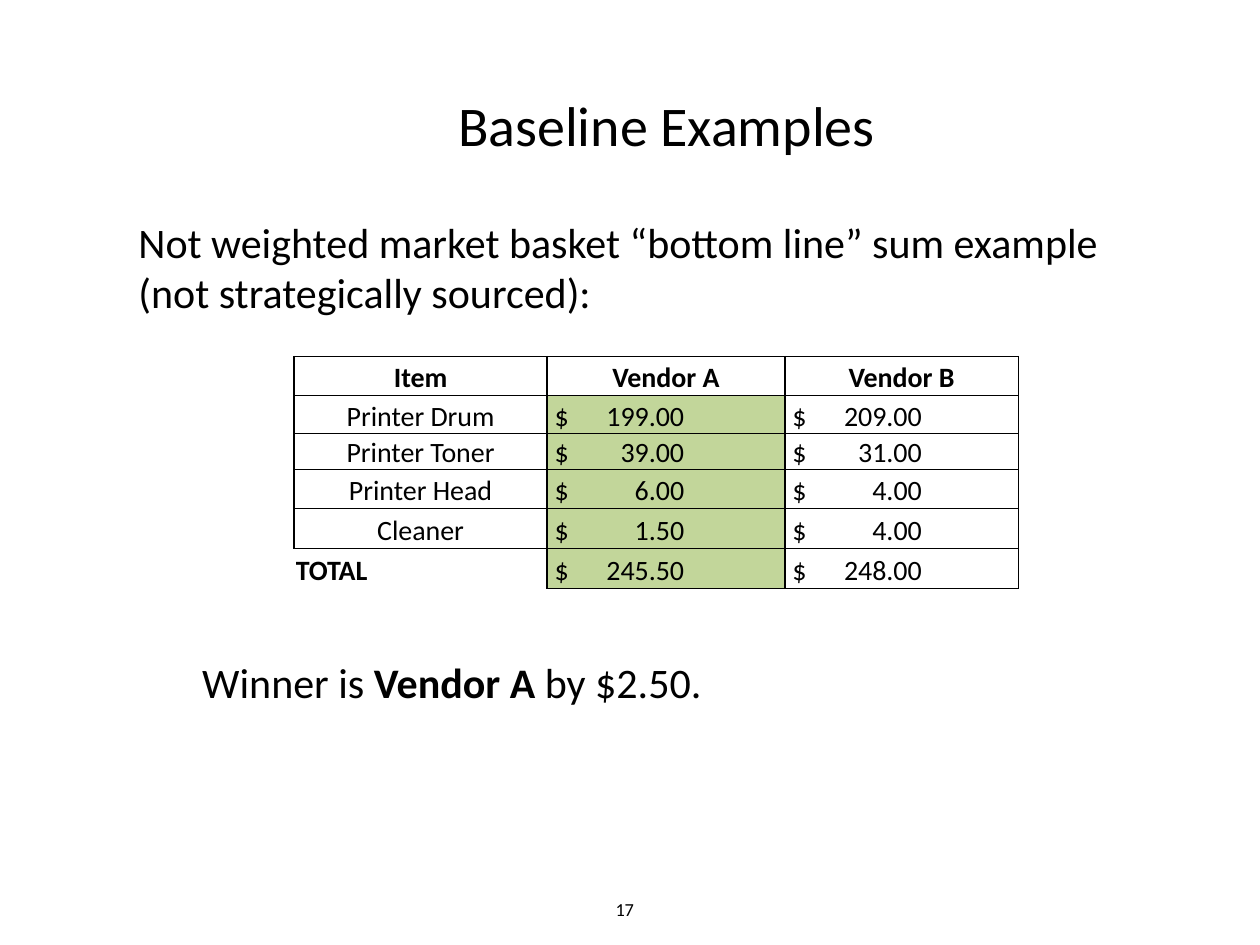
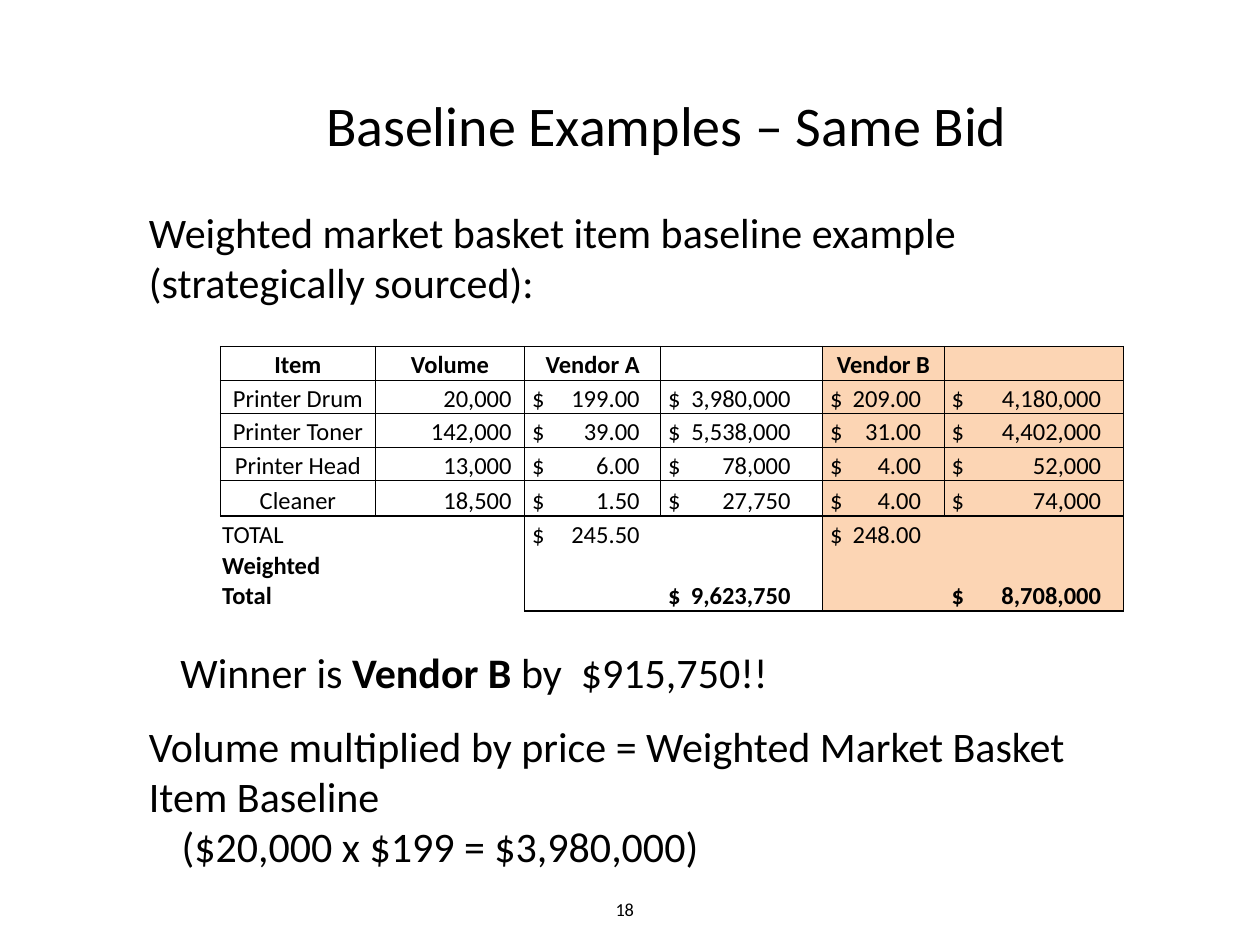
from dataclasses import dataclass
from lxml.etree import SubElement as Sub
from pptx import Presentation as Deck
from pptx.dml.color import RGBColor as Color
from pptx.enum.text import MSO_ANCHOR as Anchor, PP_ALIGN as Align
from pptx.oxml.ns import qn
from pptx.util import Pt


@dataclass(frozen=True)
class Theme:
    font: str = "Calibri"
    ink: str = "000000"
    paper: str = "FFFFFF"
    green: str = "C2D69A"
    peach: str = "FCD5B4"
    title: float = 32
    body: float = 24
    page: float = 10.5
    thin: float = 0.5
    thick: float = 1


@dataclass(frozen=True)
class Grid:
    rows: list
    place: tuple
    widths: list
    heights: list
    lines: list
    tabs: list
    labels: int
    size: float
    tint: str
    tinted: tuple
    strong: bool


THEME = Theme()
BODY = 5
PAD = 4.3
EDGE = 1

PLAIN = Grid(
    rows=[
        ("Item", "Vendor A", "Vendor B"),
        ("Printer Drum", "199.00", "209.00"),
        ("Printer Toner", "39.00", "31.00"),
        ("Printer Head", "6.00", "4.00"),
        ("Cleaner", "1.50", "4.00"),
        ("TOTAL", "245.50", "248.00"),
    ],
    place=(168, 203.8),
    widths=[144.7, 135.8, 133.5],
    heights=[22, 22, 20, 22.3, 23, 23],
    lines=[THEME.thick] * 4,
    tabs=[None, 74, 74],
    labels=1,
    size=16,
    tint=THEME.green,
    tinted=(1, 1, 1),
    strong=False,
)

WEIGHTED = Grid(
    rows=[
        ("Item", "Volume", "Vendor A", "", "Vendor B", ""),
        ("Printer Drum", "20,000", "199.00", "3,980,000", "209.00", "4,180,000"),
        ("Printer Toner", "142,000", "39.00", "5,538,000", "31.00", "4,402,000"),
        ("Printer Head", "13,000", "6.00", "78,000", "4.00", "52,000"),
        ("Cleaner", "18,500", "1.50", "27,750", "4.00", "74,000"),
        ("TOTAL", "", "245.50", "", "248.00", ""),
        ("Weighted Total", "", "", "9,623,750", "", "8,708,000"),
    ],
    place=(126, 198),
    widths=[88.5, 85.3, 77.8, 92.5, 69.5, 102.4],
    heights=[19.2] * 4 + [20, 19.5, 35],
    lines=[THEME.thick, THEME.thin] * 3 + [THEME.thick],
    tabs=[None, None, 61.5, 70, 52, 85.5],
    labels=2,
    size=14,
    tint=THEME.peach,
    tinted=(0, 4, 5),
    strong=True,
)


def add_run(para, text, size, bold=False):
    run = para.add_run()
    run.text = text
    font = run.font
    font.name, font.size, font.bold = THEME.font, Pt(size), bold
    font.color.rgb = Color.from_string(THEME.ink)


def add_text(slide, box, paras, size, align=Align.LEFT, anchor=Anchor.TOP):
    frame = slide.shapes.add_textbox(*map(Pt, box)).text_frame
    frame.word_wrap = True
    frame.vertical_anchor = anchor
    for num, (runs, indent) in enumerate(paras):
        para = frame.add_paragraph() if num else frame.paragraphs[0]
        para.alignment = align
        if indent:
            para._p.get_or_add_pPr().set("marL", str(Pt(indent)))
        for text, bold in runs:
            add_run(para, text, size, bold)


def add_line(cell, side, width):
    line = Sub(cell._tc.get_or_add_tcPr(), qn(f"a:ln{side}"))
    if not width:
        Sub(line, qn("a:noFill"))
        return
    line.set("w", str(Pt(width)))
    fill = Sub(line, qn("a:solidFill"))
    Sub(fill, qn("a:srgbClr"), val=THEME.ink)


def rule_up(grid, row, col):
    if row < BODY or (col >= grid.labels and grid.lines[col] == THEME.thick):
        return grid.lines[col]
    return 0


def rule_flat(grid, row, col):
    if row in (0, BODY):
        return THEME.thick
    if row < BODY:
        return THEME.thin
    last = row == len(grid.rows)
    return THEME.thick if last and col >= grid.labels else 0


def add_tab(para, stop):
    tabs = Sub(para._p.get_or_add_pPr(), qn("a:tabLst"))
    Sub(tabs, qn("a:tab"), pos=str(Pt(stop)), algn="r")


def fill_cell(grid, cell, row, col):
    text, stop = grid.rows[row][col], grid.tabs[col]
    head, last = row == 0, row == len(grid.rows) - 1
    cell.vertical_anchor = Anchor.BOTTOM
    cell.margin_top, cell.margin_bottom = Pt(EDGE), 0
    cell.margin_left = cell.margin_right = Pt(EDGE)
    para = cell.text_frame.paragraphs[0]
    if head or (col == 0 and row < BODY):
        para.alignment = Align.CENTER
    elif stop:
        cell.margin_left = Pt(PAD)
        add_tab(para, stop)
        text = text and f"$\t{text}"
    elif col:
        cell.margin_right = Pt(7.4)
        para.alignment = Align.RIGHT
    if text:
        add_run(para, text, grid.size, head or (last and (col == 0 or grid.strong)))
    else:
        Sub(para._p, qn("a:endParaRPr"), sz=str(grid.size * 100))
    add_line(cell, "L", rule_up(grid, row, col))
    add_line(cell, "R", rule_up(grid, row, col + 1))
    add_line(cell, "T", rule_flat(grid, row, col))
    add_line(cell, "B", rule_flat(grid, row + 1, col))
    top, left, right = grid.tinted
    tint = row >= top and left <= col <= right
    cell.fill.solid()
    cell.fill.fore_color.rgb = Color.from_string(grid.tint if tint else THEME.paper)


def add_grid(slide, grid):
    size = (sum(grid.widths), sum(grid.heights))
    area = map(Pt, grid.place + size)
    table = slide.shapes.add_table(len(grid.rows), len(grid.widths), *area).table
    table.first_row = table.horz_banding = False
    for col, width in zip(table.columns, grid.widths):
        col.width = Pt(width)
    for num, height in enumerate(grid.heights):
        table.rows[num].height = Pt(height)
        for col in range(len(grid.widths)):
            fill_cell(grid, table.cell(num, col), num, col)


def add_body(slide, box, *paras):
    add_text(slide, box, paras, THEME.body)


def add_slide(deck, title, page):
    slide = deck.slides.add_slide(deck.slide_layouts[6])
    add_text(slide, (48, 48, 666, 46), [([(title, False)], 0)],
             THEME.title, Align.CENTER)
    add_text(slide, (276, 510, 162, 19), [([(str(page), False)], 0)],
             THEME.page, Align.CENTER, Anchor.MIDDLE)
    return slide


def winner(name, gap):
    return [("Winner is ", False), (name, True), (gap, False)], 0


def main():
    deck = Deck()
    deck.slide_width, deck.slide_height = Pt(720), Pt(540)

    slide = add_slide(deck, "Baseline Examples", 17)
    add_body(slide, (72, 120, 594, 66), ([(
        "Not weighted market basket “bottom line” sum example "
        "(not strategically sourced):", False)], 0))
    add_grid(slide, PLAIN)
    add_body(slide, (108.5, 371.5, 318, 36), winner("Vendor A", " by $2.50."))

    slide = add_slide(deck, "Baseline Examples – Same Bid", 18)
    add_body(slide, (78, 114.3, 588, 66), ([(
        "Weighted market basket item baseline example "
        "(strategically sourced):", False)], 0))
    add_grid(slide, WEIGHTED)
    add_body(slide, (96, 366, 552, 36), winner("Vendor B", " by  $915,750!!"))
    add_body(
        slide, (78, 408, 552, 94),
        ([("Volume multiplied by price = Weighted Market Basket "
           "Item Baseline", False)], 0),
        ([("($20,000 x $199 = $3,980,000)", False)], 18.7))

    deck.save("out.pptx")


if __name__ == "__main__":
    main()
